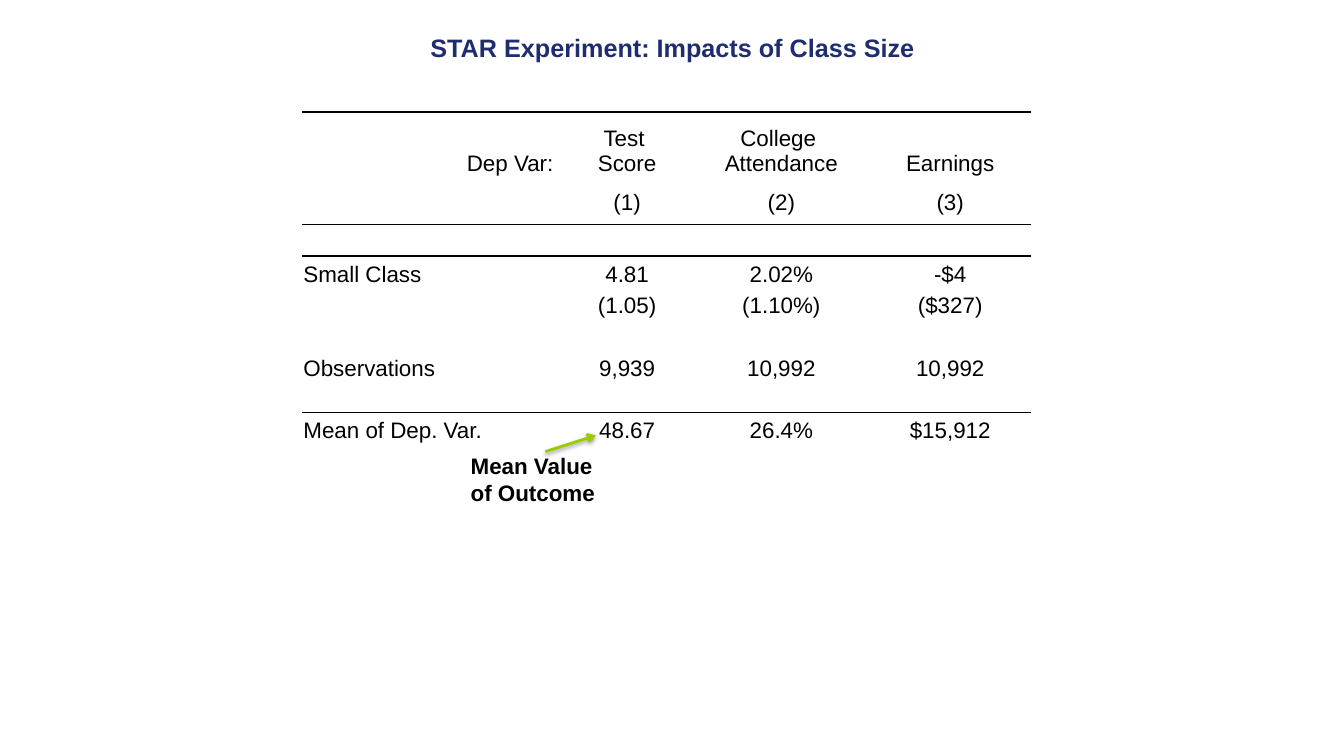
"""Build the class size results slide."""
import pptx
import pptx.util
import pptx.dml.color
import pptx.enum.shapes
import pptx.enum.text
import pptx.oxml
import pptx.oxml.ns

WIDE, HIGH = 13.33, 7.5
FONT = "Arial"
INK, NAVY, LIME = "000000", "1E2D70", "99CC00"
TITLE = "STAR Experiment: Impacts of Class Size"
NOTE = ["Mean Value", "of Outcome"]
BLANK = ["", "", "", ""]
ROWS = [
    ["Dep Var: ", "Test \nScore", "College \nAttendance", "Earnings"],
    BLANK,
    ["", "(1)", "(2)", "(3)"],
    BLANK,
    ["Small Class", "4.81", "2.02%", "-$4"],
    ["", "(1.05)", "(1.10%)", "($327)"],
    BLANK,
    ["Observations", "9,939", "10,992", "10,992"],
    BLANK,
    ["Mean of Dep. Var.", "48.67", "26.4%", "$15,912"],
]
COLS = [2.56, 1.32, 1.74, 1.61]
TALL = [0.64, 0.13, 0.35] + [0.31] * 7
LEFT, TOP = 3, 1.11
RULES = {0: [("T", 1.5)], 2: [("B", 1)], 3: [("T", 1)], 8: [("B", 1)], 9: [("T", 1)]}
PLAIN = "{2D5ABB26-0587-4C30-8999-92F81FD0307C}"

Inch = pptx.util.Inches
Align = pptx.enum.text.PP_ALIGN
Anchor = pptx.enum.text.MSO_ANCHOR


def tint(code):
    return pptx.dml.color.RGBColor.from_string(code)


def node(body):
    return pptx.oxml.parse_xml(body.replace(">", " " + pptx.oxml.ns.nsdecls("a") + ">", 1))


def write(frame, lines, size=16, bold=False, color=INK, align=Align.LEFT):
    for num, line in enumerate(lines):
        para = frame.paragraphs[0] if num == 0 else frame.add_paragraph()
        para.alignment = align
        run = para.add_run()
        run.text = line
        font = run.font
        font.name, font.size, font.bold = FONT, pptx.util.Pt(size), bold
        font.color.rgb = tint(color)


def rule(cell, side, size):
    wide = int(pptx.util.Pt(size))
    cell._tc.get_or_add_tcPr().insert(0, node(
        f'<a:ln{side} w="{wide}"><a:solidFill><a:srgbClr val="{INK}"/>'
        f'</a:solidFill></a:ln{side}>'))


def place(cell, text, row, col):
    cell.fill.background()
    cell.margin_left = cell.margin_right = cell.margin_top = Inch(0.01)
    cell.margin_bottom = 0
    cell.vertical_anchor = Anchor.TOP if row == 2 else Anchor.BOTTOM
    if text:
        first = Align.RIGHT if row == 0 else Align.LEFT
        write(cell.text_frame, text.split("\n"), align=Align.CENTER if col else first)
    else:
        cell.text_frame.paragraphs[0]._p.append(node('<a:endParaRPr sz="400"></a:endParaRPr>'))
    for side, size in RULES.get(row, []):
        rule(cell, side, size)


def grid(slide):
    frame = slide.shapes.add_table(len(ROWS), len(COLS), Inch(LEFT), Inch(TOP),
                                   Inch(sum(COLS)), Inch(sum(TALL)))
    table = frame.table
    table.first_row = table.horz_banding = False
    table._tbl.tblPr.find(pptx.oxml.ns.qn("a:tableStyleId")).text = PLAIN
    for col, size in zip(table.columns, COLS):
        col.width = Inch(size)
    for row, size in zip(table.rows, TALL):
        row.height = Inch(size)
    for row, texts in enumerate(ROWS):
        for col, text in enumerate(texts):
            place(table.cell(row, col), text, row, col)


def arrow(slide):
    line = slide.shapes.add_connector(pptx.enum.shapes.MSO_CONNECTOR.STRAIGHT,
                                      Inch(5.41), Inch(4.48), Inch(5.91), Inch(4.32))
    line.line.color.rgb = tint(LIME)
    line.line.width = pptx.util.Pt(2)
    line.line._get_or_add_ln().append(node('<a:tailEnd type="arrow"></a:tailEnd>'))
    line._element.spPr.append(node(
        '<a:effectLst><a:outerShdw blurRad="39370" dist="20320" dir="5400000" rotWithShape="0">'
        f'<a:srgbClr val="{INK}"><a:alpha val="38000"/></a:srgbClr>'
        '</a:outerShdw></a:effectLst>'))


def main():
    deck = pptx.Presentation()
    deck.slide_width, deck.slide_height = Inch(WIDE), Inch(HIGH)
    slide = deck.slides.add_slide(deck.slide_layouts[5])
    head = slide.shapes.title
    head.left, head.top = Inch(0.67), Inch(0.33)
    head.width, head.height = Inch(12), Inch(0.28)
    frame = head.text_frame
    frame.margin_top = frame.margin_bottom = 0
    frame.vertical_anchor = Anchor.MIDDLE
    write(frame, [TITLE], size=18, bold=True, color=NAVY, align=Align.CENTER)
    grid(slide)
    arrow(slide)
    note = slide.shapes.add_textbox(Inch(4.57), Inch(4.44), Inch(1.45), Inch(0.64))
    note.text_frame.word_wrap = False
    note.text_frame.auto_size = pptx.enum.text.MSO_AUTO_SIZE.SHAPE_TO_FIT_TEXT
    write(note.text_frame, NOTE, bold=True)
    deck.save("out.pptx")


if __name__ == "__main__":
    main()
